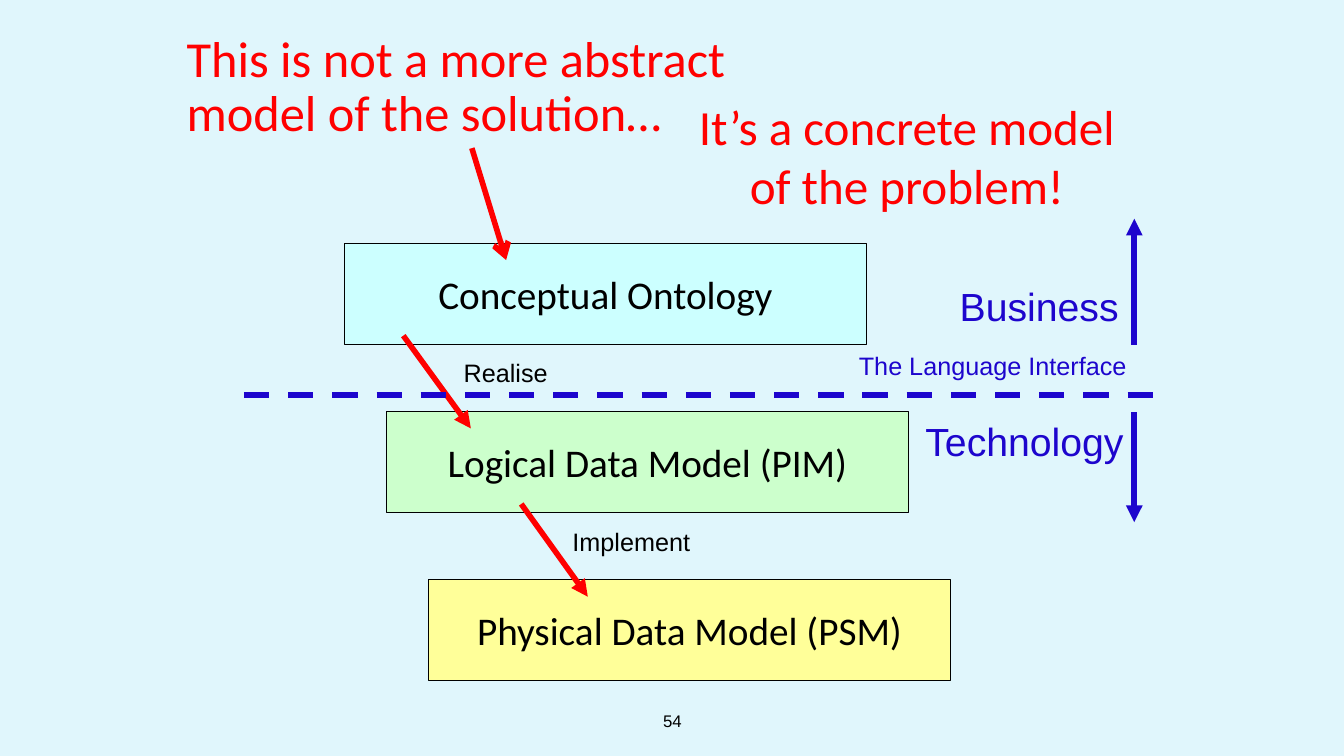
from typing import NamedTuple

from lxml import etree
from pptx import Presentation
from pptx.dml.color import RGBColor
from pptx.enum.dml import MSO_LINE
from pptx.enum.shapes import MSO_CONNECTOR, MSO_SHAPE
from pptx.enum.text import MSO_ANCHOR, MSO_AUTO_SIZE, PP_ALIGN
from pptx.oxml.ns import qn
from pptx.util import Inches, Pt

STRAIGHT = MSO_CONNECTOR.STRAIGHT
RECTANGLE = MSO_SHAPE.RECTANGLE
DASH = MSO_LINE.DASH
TOP, MIDDLE = MSO_ANCHOR.TOP, MSO_ANCHOR.MIDDLE
LEFT, CENTER = PP_ALIGN.LEFT, PP_ALIGN.CENTER
NO_FIT = MSO_AUTO_SIZE.NONE

BACKGROUND = RGBColor(0xE0, 0xF6, 0xFC)
BLACK = RGBColor(0, 0, 0)
RED = RGBColor(0xFF, 0, 0)
BLUE = RGBColor(0x1D, 0x05, 0xCD)
CYAN = RGBColor(0xCC, 0xFF, 0xFF)
GREEN = RGBColor(0xCC, 0xFF, 0xCC)
YELLOW = RGBColor(0xFF, 0xFF, 0x99)


class Model(NamedTuple):
    name: str
    fill: RGBColor


class Label(NamedTuple):
    text: str
    left: float
    top: float
    width: float
    height: float
    size: float
    color: RGBColor
    font: str = "Arial"
    align: PP_ALIGN = LEFT
    anchor: MSO_ANCHOR = TOP
    wrap: bool = True


class Line(NamedTuple):
    x1: float
    y1: float
    x2: float
    y2: float
    color: RGBColor
    head: str = "triangle"
    width: float = 4


MODELS = [
    Model("Conceptual Ontology", CYAN),
    Model("Logical Data Model (PIM)", GREEN),
    Model("Physical Data Model (PSM)", YELLOW),
]
MODEL_LEFT, MODEL_TOP = 3.42, 2.42
MODEL_WIDTH, MODEL_HEIGHT = 5.17, 1
STEP_X, STEP_Y = 5 / 12, 5 / 3

TITLE = Label("This is not a more abstract model of the solution…",
              1.75, 0.25, 6.42, 1.25, 36, RED, "Calibri", anchor=MIDDLE)
LABELS = [
    Label("Realise", 4.5, 3.5, 1.03, 0.4, 18, BLACK, wrap=False),
    Label("Implement", 5.58, 5.17, 1.37, 0.4, 18, BLACK, wrap=False),
    Label("The Language Interface", 8.42, 3.43, 3.08, 0.4, 18, BLUE),
    Label("Business", 9.42, 2.75, 2, 0.57, 28, BLUE),
    Label("Technology", 9.08, 4.09, 2.25, 0.57, 28, BLUE),
    Label("It’s a concrete model of the problem!",
          6.83, 0.92, 4.33, 1.25, 35.1, RED, "Calibri", CENTER, MIDDLE),
    Label("54", 4.42, 6.95, 4.5, 0.4, 12, BLACK, align=CENTER, anchor=MIDDLE),
]
LINES = [
    Line(5.17, 5, 5.83, 5.92, RED),
    Line(4, 3.33, 4.67, 4.25, RED),
    Line(11.25, 4.09, 11.25, 5.18, BLUE),
    Line(11.25, 3.42, 11.25, 2.17, BLUE),
    Line(2.42, 3.92, 11.5, 3.92, BLUE, head="", width=4.5),
    Line(4.68, 1.47, 5.02, 2.58, RED, head="arrow"),
]


def write_text(sp, label: Label):
    """Fill a shape's text frame and return its paragraph."""
    tf = sp.text_frame
    tf.auto_size = NO_FIT
    tf.word_wrap = label.wrap
    tf.vertical_anchor = label.anchor
    p = tf.paragraphs[0]
    p.alignment = label.align
    r = p.add_run()
    r.text = label.text
    r.font.name = label.font
    r.font.size = Pt(label.size)
    r.font.color.rgb = label.color
    return p


def bounds(label: Label) -> list[int]:
    return [Inches(v) for v in
            (label.left, label.top, label.width, label.height)]


def add_title(slide, label: Label) -> None:
    sp = slide.shapes.title
    sp.left, sp.top, sp.width, sp.height = bounds(label)
    p = write_text(sp, label)
    p.line_spacing = 0.9
    p.space_before = Pt(0)


def add_label(slide, label: Label) -> None:
    write_text(slide.shapes.add_textbox(*bounds(label)), label)


def add_model(slide, model: Model, index: int) -> None:
    label = Label(model.name, MODEL_LEFT + index * STEP_X,
                  MODEL_TOP + index * STEP_Y, MODEL_WIDTH, MODEL_HEIGHT,
                  28, BLACK, "Calibri", CENTER, MIDDLE, False)
    sp = slide.shapes.add_shape(RECTANGLE, *bounds(label))
    sp.shadow.inherit = False
    sp.fill.solid()
    sp.fill.fore_color.rgb = model.fill
    sp.line.color.rgb = BLACK
    sp.line.width = Pt(0.75)
    write_text(sp, label)


def add_line(slide, line: Line) -> None:
    cx = slide.shapes.add_connector(
        STRAIGHT, Inches(line.x1), Inches(line.y1),
        Inches(line.x2), Inches(line.y2))
    cx.line.color.rgb = line.color
    cx.line.width = Pt(line.width)
    if line.head:
        etree.SubElement(cx.line._get_or_add_ln(), qn("a:tailEnd"),
                         type=line.head)
    else:
        cx.line.dash_style = DASH
    etree.SubElement(cx._element.spPr, qn("a:effectLst"))


def main() -> None:
    prs = Presentation()
    prs.slide_width, prs.slide_height = Inches(13.33), Inches(7.5)
    slide = prs.slides.add_slide(prs.slide_layouts[5])
    slide.background.fill.solid()
    slide.background.fill.fore_color.rgb = BACKGROUND

    # Title and the three stepped models
    add_title(slide, TITLE)
    for index, model in enumerate(MODELS):
        add_model(slide, model, index)

    # Arrows, language interface and captions
    for line in LINES:
        add_line(slide, line)
    for label in LABELS:
        add_label(slide, label)

    prs.save("out.pptx")


if __name__ == "__main__":
    main()
